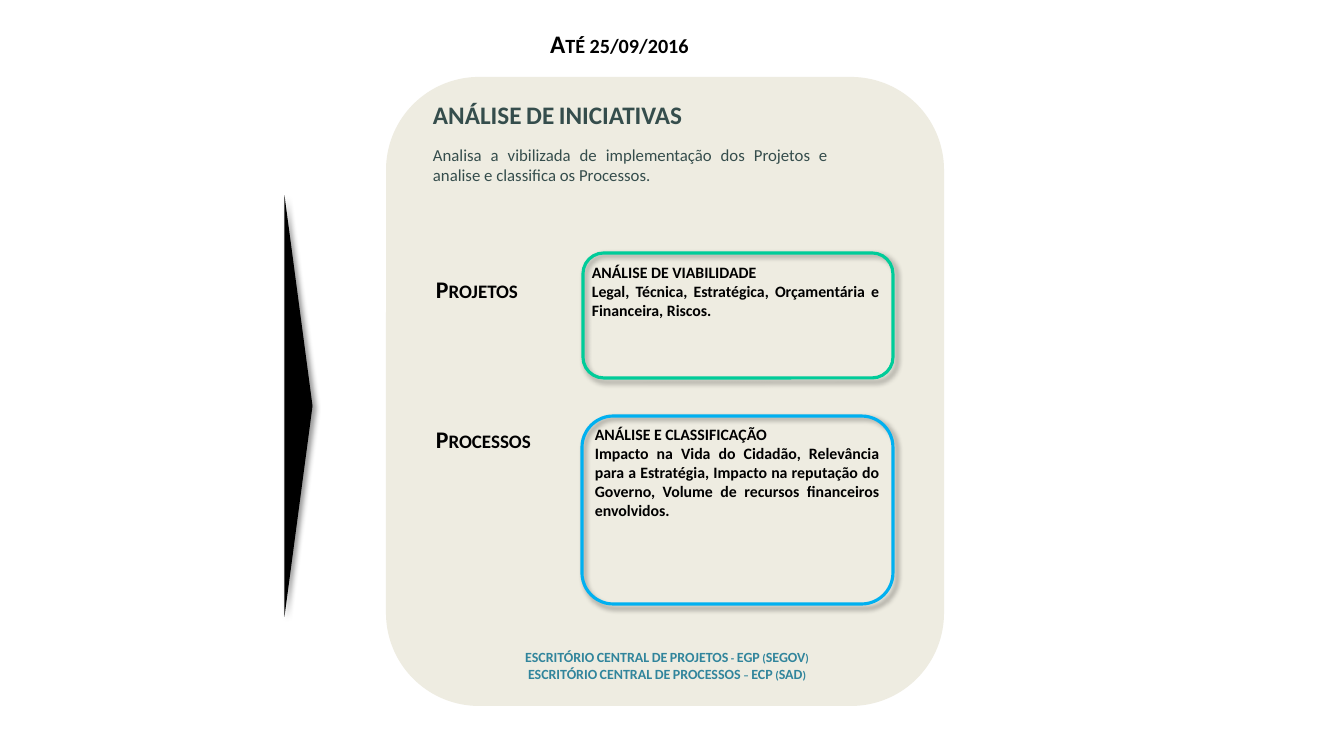
from lxml import etree
from pptx import Presentation
from pptx.dml.color import RGBColor
from pptx.enum.shapes import MSO_SHAPE
from pptx.enum.text import MSO_ANCHOR, MSO_AUTO_SIZE, PP_ALIGN
from pptx.oxml.ns import qn
from pptx.util import Emu, Pt

ROUNDED = MSO_SHAPE.ROUNDED_RECTANGLE
TRIANGLE = MSO_SHAPE.ISOSCELES_TRIANGLE
LEFT, CENTER, JUSTIFY = PP_ALIGN.LEFT, PP_ALIGN.CENTER, PP_ALIGN.JUSTIFY
TOP = MSO_ANCHOR.TOP
FIXED = MSO_AUTO_SIZE.NONE
TITLE_ONLY = 5
FONT = "Calibri"
BLACK, SLATE, TEAL, SAND = "000000", "354D4C", "31859C", "EEECE1"
GREEN, BLUE = "00CC99", "00B0F0"
PX_PER_INCH = 100.8


def px(length):
    return Emu(round(length * 914400 / PX_PER_INCH))


def color(value):
    return RGBColor.from_string(value)


def write(frame, text, size=18, ink=BLACK, bold=True, small_caps=False, align=LEFT):
    frame.word_wrap = True
    frame.auto_size = FIXED
    frame.vertical_anchor = TOP
    frame.text = text
    for paragraph in frame.paragraphs:
        paragraph.alignment = align
        for run in paragraph.runs:
            run.font.name = FONT
            run.font.size = Pt(size)
            run.font.bold = bold
            run.font.color.rgb = color(ink)
            if small_caps:
                run.font._element.set("cap", "small")


def add_text(slide, box, text, **text_format):
    label = slide.shapes.add_textbox(*map(px, box))
    write(label.text_frame, text, **text_format)


def add_shadow(shape):
    effects = shape._element.spPr.find(qn("a:effectLst"))
    shadow = etree.SubElement(effects, qn("a:outerShdw"), blurRad=str(Pt(4)),
                              dist=str(Pt(3)), dir="2700000", algn="tl", rotWithShape="0")
    tint = etree.SubElement(shadow, qn("a:srgbClr"), val=BLACK)
    etree.SubElement(tint, qn("a:alpha"), val="40000")


def add_block(slide, kind, box, fill=None, outline=None, shadow=False, rotation=0):
    block = slide.shapes.add_shape(kind, *map(px, box))
    block.rotation = rotation
    if fill:
        block.fill.solid()
        block.fill.fore_color.rgb = color(fill)
    else:
        block.fill.background()
    if outline:
        block.line.color.rgb = color(outline)
        block.line.width = Pt(2.25)
    else:
        block.line.fill.background()
    block.shadow.inherit = False
    if shadow:
        add_shadow(block)


def add_title(slide, box, text, **text_format):
    title = slide.shapes.title
    title.left, title.top, title.width, title.height = map(px, box)
    write(title.text_frame, text, **text_format)


def add_initiative(slide, name, name_box, frame_box, outline, criteria_box, criteria):
    add_text(slide, name_box, name, size=17, small_caps=True)
    add_block(slide, ROUNDED, frame_box, outline=outline, shadow=True)
    add_text(slide, criteria_box, criteria, size=11.3, align=JUSTIFY)


def main():
    deck = Presentation()
    deck.slide_width, deck.slide_height = px(1344), px(756)
    slide = deck.slides.add_slide(deck.slide_layouts[TITLE_ONLY])

    add_title(slide, (540, 23, 237, 52), "Até 25/09/2016", small_caps=True)
    add_block(slide, ROUNDED, (386, 77, 558, 629), fill=SAND)
    add_text(slide, (423, 140, 415, 66),
             "Analisa a vibilizada de implementação dos Projetos e analise e classifica os Processos.",
             size=12, ink=SLATE, bold=False, align=JUSTIFY)
    add_text(slide, (423, 94, 440, 124), "ANÁLISE DE INICIATIVAS", ink=SLATE, small_caps=True)

    add_initiative(slide, "Projetos", (426, 270, 133, 50), (583, 253, 310, 125), GREEN,
                   (582, 258, 307, 112),
                   "ANÁLISE DE VIABILIDADE\n"
                   "Legal, Técnica, Estratégica, Orçamentária e Financeira, Riscos.")
    add_initiative(slide, "Processos", (426, 420, 149, 50), (582, 416, 311, 188), BLUE,
                   (585, 420, 304, 161),
                   "ANÁLISE E CLASSIFICAÇÃO\n"
                   "Impacto na Vida do Cidadão, Relevância para a Estratégia, Impacto na reputação "
                   "do Governo, Volume de recursos financeiros envolvidos.")

    add_text(slide, (437, 644, 460, 56),
             "ESCRITÓRIO CENTRAL DE PROJETOS - EGP (SEGOV)\n"
             "ESCRITÓRIO CENTRAL DE PROCESSOS – ECP (SAD)",
             size=10, ink=TEAL, small_caps=True, align=CENTER)
    add_block(slide, TRIANGLE, (88, 392, 421, 28), fill=BLACK, shadow=True, rotation=90)

    deck.save("out.pptx")


if __name__ == "__main__":
    main()
